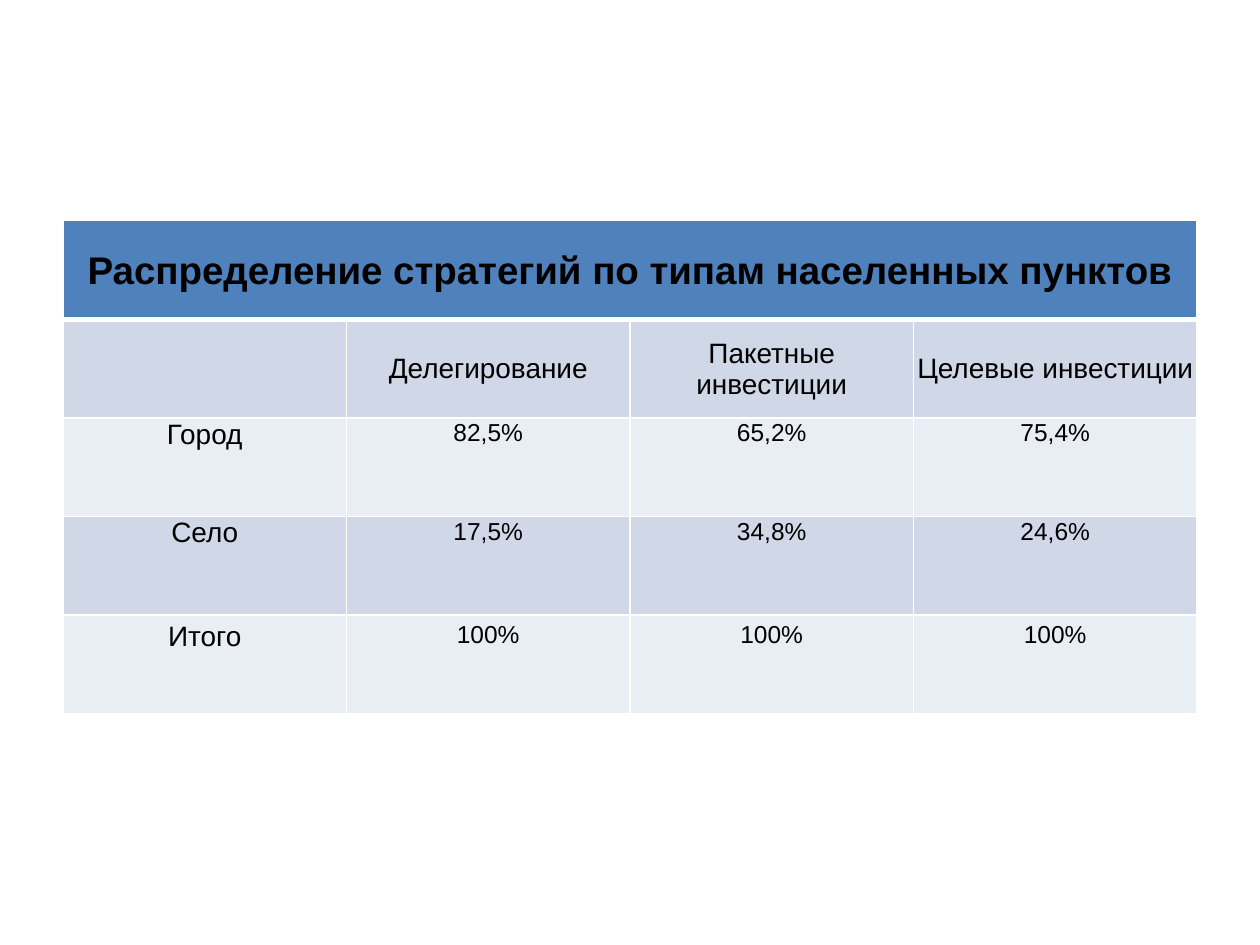
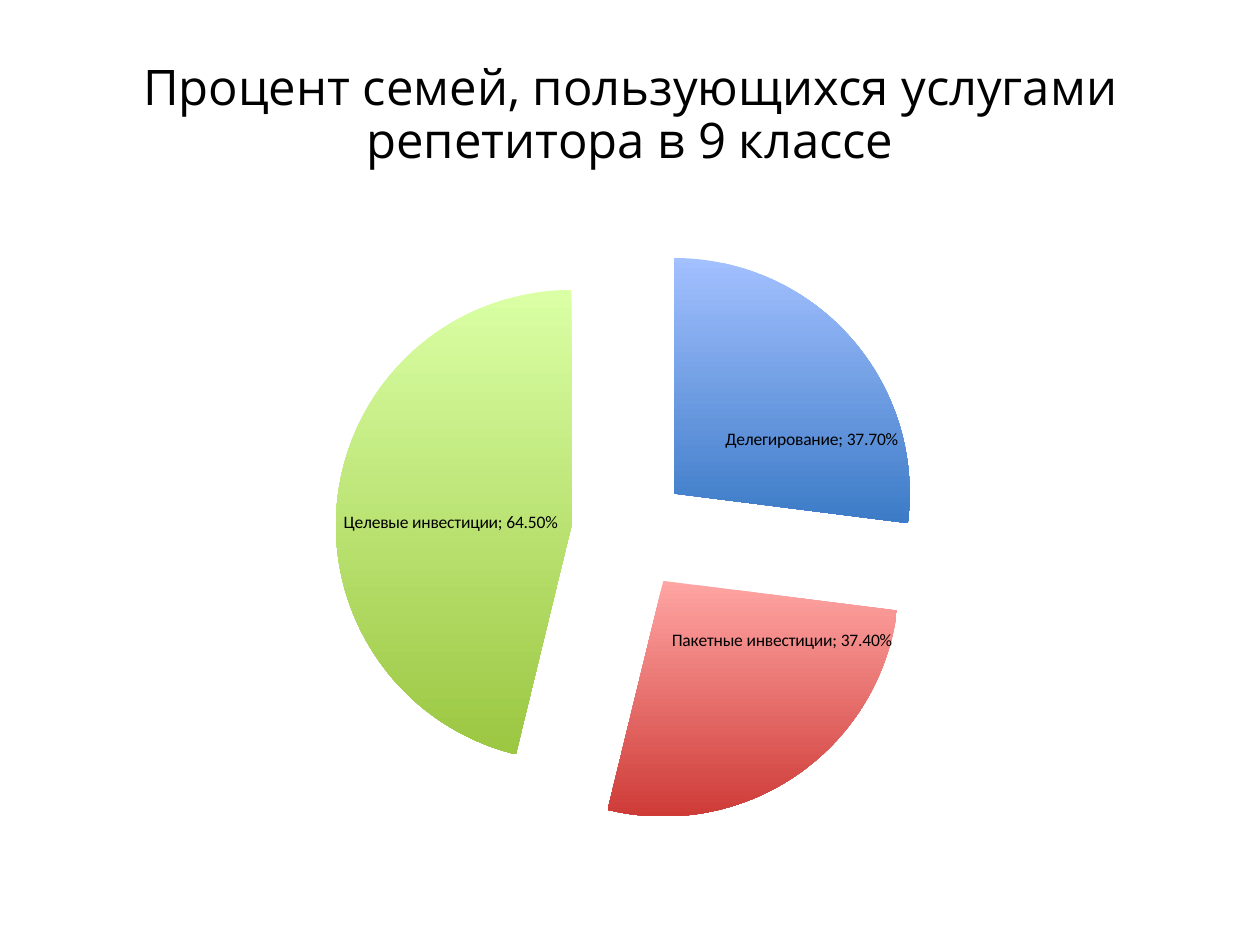
from dataclasses import dataclass

from lxml import etree
from pptx import Presentation
from pptx.chart.data import CategoryChartData
from pptx.dml.color import RGBColor
from pptx.enum.chart import XL_CHART_TYPE, XL_LABEL_POSITION
from pptx.enum.text import MSO_ANCHOR, PP_ALIGN
from pptx.oxml.ns import qn
from pptx.util import Cm, Pt

PIE = XL_CHART_TYPE.PIE
BEST_FIT = XL_LABEL_POSITION.BEST_FIT
CENTER = PP_ALIGN.CENTER
MIDDLE = MSO_ANCHOR.MIDDLE
TOP = MSO_ANCHOR.TOP

BLACK = "000000"
WHITE = "FFFFFF"
HEADER_FILL = "4F81BD"
BAND_FILLS = ("D0D8E8", "E9EDF4")

LEFT = Cm(1.27)
BODY_TOP = Cm(4.45)
BODY_WIDTH = Cm(22.86)
EXPLOSION = 25

STRATEGIES = ("Делегирование", "Пакетные инвестиции", "Целевые инвестиции")


@dataclass(frozen=True)
class TextStyle:
    font: str
    size: float
    bold: bool = False
    line_spacing: float = 1.0


@dataclass(frozen=True)
class TableRow:
    label: str
    values: tuple
    label_style: TextStyle
    value_style: TextStyle
    anchor: MSO_ANCHOR = TOP
    tight: bool = True


@dataclass(frozen=True)
class Slice:
    name: str
    share: float
    light: str
    dark: str


SLIDE_TITLE = TextStyle("Open Sans", 28, line_spacing=0.9)
TABLE_TITLE = TextStyle("Arial", 22, bold=True)
HEADING = TextStyle("Arial", 16)
VALUE = TextStyle("Arial", 14)

ROWS = (
    TableRow("", STRATEGIES, HEADING, HEADING, anchor=MIDDLE),
    TableRow("Город", ("82,5%", "65,2%", "75,4%"), HEADING, VALUE),
    TableRow("Село", ("17,5%", "34,8%", "24,6%"), HEADING, VALUE),
    TableRow("Итого", ("100%",) * 3, HEADING, VALUE, tight=False),
)

SLICES = (
    Slice(STRATEGIES[0], 0.377, "A3C0FF", "3C7BC7"),
    Slice(STRATEGIES[1], 0.374, "FFA5A3", "CE3B37"),
    Slice(STRATEGIES[2], 0.645, "DAFFA5", "9BC742"),
)


def color(value: str) -> RGBColor:
    return RGBColor.from_string(value)


def write(frame, text: str, style: TextStyle) -> None:
    para = frame.paragraphs[0]
    para.alignment = CENTER
    para.line_spacing = style.line_spacing
    if not text:
        return
    span = para.add_run()
    span.text = text
    span.font.name = style.font
    span.font.size = Pt(style.size)
    span.font.bold = style.bold
    span.font.color.rgb = color(BLACK)


def add_border(cell, side: str, width: float) -> None:
    properties = cell._tc.get_or_add_tcPr()
    line = etree.SubElement(properties, qn(f"a:{side}"), w=str(Pt(width)))
    fill = etree.SubElement(line, qn("a:solidFill"))
    etree.SubElement(fill, qn("a:srgbClr"), val=WHITE)


def style_cell(cell, fill: str, anchor: MSO_ANCHOR, tight: bool,
               top_border: float = 1, bottom_border: float = 1) -> None:
    borders = {"lnL": 1, "lnR": 1, "lnT": top_border, "lnB": bottom_border}
    for side, width in borders.items():
        add_border(cell, side, width)
    cell.fill.solid()
    cell.fill.fore_color.rgb = color(fill)
    cell.vertical_anchor = anchor
    cell.margin_left = cell.margin_right = Cm(0.03 if tight else 0.25)
    cell.margin_top = Cm(0.03 if tight else 0.13)
    cell.margin_bottom = Cm(0 if tight else 0.13)


def add_strategy_table(page) -> None:
    row_count, column_count = len(ROWS) + 1, len(STRATEGIES) + 1
    table = page.shapes.add_table(
        row_count, column_count, LEFT, BODY_TOP, BODY_WIDTH, Cm(9.93)
    ).table

    for column in range(column_count):
        style_cell(table.cell(0, column), HEADER_FILL, MIDDLE, True, bottom_border=3)
    title = table.cell(0, 0)
    title.merge(table.cell(0, column_count - 1))
    write(title.text_frame, "Распределение стратегий по типам населенных пунктов", TABLE_TITLE)

    for index, row in enumerate(ROWS):
        for column, text in enumerate((row.label, *row.values)):
            cell = table.cell(index + 1, column)
            style_cell(cell, BAND_FILLS[index % 2], row.anchor, row.tight,
                       top_border=3 if index == 0 else 1)
            write(cell.text_frame, text, row.value_style if column else row.label_style)


def add_title(page, text: str) -> None:
    box = page.shapes.add_textbox(LEFT, Cm(0.76), BODY_WIDTH, Cm(3.18))
    frame = box.text_frame
    frame.word_wrap = True
    frame.vertical_anchor = MIDDLE
    write(frame, text, SLIDE_TITLE)


def add_tutor_chart(page) -> None:
    data = CategoryChartData(number_format="0.00%")
    data.categories = [item.name for item in SLICES]
    data.add_series("Series 1", [item.share for item in SLICES])
    chart = page.shapes.add_chart(
        PIE, LEFT, BODY_TOP, BODY_WIDTH, Cm(12.57), data
    ).chart
    chart.has_title = False
    chart.has_legend = False
    chart.font.name = "Calibri"
    chart.font.size = Pt(10)
    chart.font.color.rgb = color(BLACK)

    plot = chart.plots[0]
    plot.vary_by_categories = True
    series = plot.series[0]
    explosion = etree.Element(qn("c:explosion"), val=str(EXPLOSION))
    series._element.find(qn("c:tx")).addnext(explosion)

    for index, item in enumerate(SLICES):
        point = series.points[index]
        fill = point.format.fill
        fill.gradient()
        fill.gradient_angle = 270
        for stop, shade in zip(fill.gradient_stops, (item.light, item.dark)):
            stop.color.rgb = color(shade)
        point.format.line.fill.background()

    labels = series.data_labels
    labels.show_value = True
    labels.show_category_name = True
    labels.show_percentage = False
    labels.show_legend_key = False
    labels.number_format = "0.00%"
    labels.number_format_is_linked = False
    labels.position = BEST_FIT


def main() -> None:
    deck = Presentation()
    deck.slide_width, deck.slide_height = Cm(25.4), Cm(19.05)
    blank = deck.slide_layouts[6]

    add_strategy_table(deck.slides.add_slide(blank))

    chart_page = deck.slides.add_slide(blank)
    add_title(chart_page, "Процент семей, пользующихся услугами репетитора в 9 классе")
    add_tutor_chart(chart_page)

    deck.save("out.pptx")


if __name__ == "__main__":
    main()
